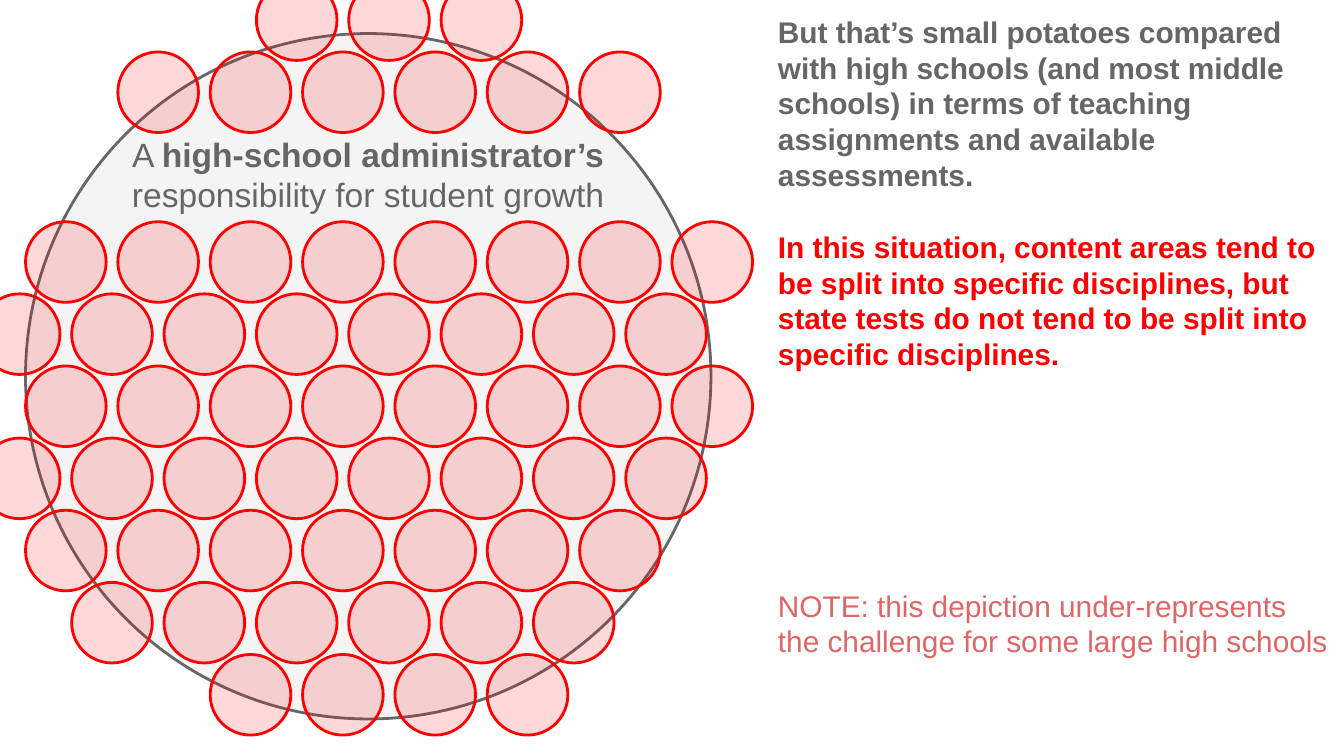
"""Build a slide on a high-school administrator's responsibility for student growth."""
import dataclasses

import pptx
import pptx.dml.color
import pptx.enum.shapes
import pptx.enum.text
import pptx.oxml.ns
import pptx.util
from lxml import etree

Inches = pptx.util.Inches
Pt = pptx.util.Pt


@dataclasses.dataclass(frozen=True)
class Theme:
    font: str = "Arial"
    gray: str = "666666"
    red: str = "FF0000"
    rose: str = "E06666"
    heading: int = 18
    body: int = 16
    outline: float = 1.5
    gray_alpha: int = 7
    red_alpha: int = 15


THEME = Theme()
SLIDE_WIDTH = Inches(10)
SLIDE_HEIGHT = SLIDE_WIDTH * 9 // 16
DIAMETER = 0.6
LEFT = 0.19
COL_STEP = 4.81 / 7
ROW_STEP = 3.22 / 6
LINE_HEIGHT = 19.25

BANDS = [
    (-0.15, [(2.5, 3), (1, 6)]),
    (1.65, [(0, 8), (-0.5, 8), (0, 8), (-0.5, 8), (0, 7), (0.5, 6), (2, 4)]),
]

HEADING = [
    [("A ", False), ("high-school administrator’s", True)],
    [("responsibility for student growth", False)],
]

MESSAGES = [
    ("But that’s small potatoes compared with high schools (and most middle schools) "
     "in terms of teaching assignments and available assessments.", THEME.gray, True, 0),
    ("In this situation, content areas tend to be split into specific disciplines, "
     "but state tests do not tend to be split into specific disciplines.", THEME.red, True, 1),
    ("NOTE: this depiction under-represents the challenge for some large high schools",
     THEME.rose, False, 6),
]


def rgb(color):
    return pptx.dml.color.RGBColor.from_string(color)


def set_all(obj, values):
    for name, value in values.items():
        setattr(obj, name, value)


def set_frame(tf, inset):
    margins = {f"margin_{side}": Inches(inset) for side in ("left", "top", "right", "bottom")}
    set_all(tf, {
        "word_wrap": True,
        "auto_size": pptx.enum.text.MSO_AUTO_SIZE.NONE,
        "vertical_anchor": pptx.enum.text.MSO_ANCHOR.TOP,
        **margins,
    })


def add_paragraph(tf, index, runs, size, color, **fmt):
    p = tf.add_paragraph() if index else tf.paragraphs[0]
    set_all(p, fmt)
    for text, bold in runs:
        r = p.add_run()
        r.text = text
        set_all(r.font, {"name": THEME.font, "size": Pt(size), "bold": bold})
        r.font.color.rgb = rgb(color)


def add_circle(s, x, y, diameter, color, alpha):
    sp = s.shapes.add_shape(
        pptx.enum.shapes.MSO_SHAPE.OVAL,
        Inches(x), Inches(y), Inches(diameter), Inches(diameter))
    sp.shadow.inherit = False
    sp.fill.solid()
    sp.fill.fore_color.rgb = rgb(color)
    qn = pptx.oxml.ns.qn
    clr = sp.element.spPr.find(qn("a:solidFill")).find(qn("a:srgbClr"))
    etree.SubElement(clr, qn("a:alpha"), val=str(alpha * 1000))
    sp.line.color.rgb = rgb(color)
    sp.line.width = Pt(THEME.outline)
    return sp


def add_responsibility(s):
    sp = add_circle(s, LEFT, 0.25, 5.1, THEME.gray, THEME.gray_alpha)
    tf = sp.text_frame
    set_frame(tf, 0)
    for i, runs in enumerate(HEADING):
        add_paragraph(tf, i, runs, THEME.heading, THEME.gray,
                      alignment=pptx.enum.text.PP_ALIGN.CENTER)


def add_assignments(s):
    for top, rows in BANDS:
        for row, (start, count) in enumerate(rows):
            for col in range(count):
                add_circle(s, LEFT + (start + col) * COL_STEP, top + row * ROW_STEP,
                           DIAMETER, THEME.red, THEME.red_alpha)


def add_messages(s):
    tf = s.shapes.add_textbox(Inches(5.69), 0, Inches(4.31), SLIDE_HEIGHT).text_frame
    set_frame(tf, 0.1)
    for i, (text, color, bold, gap) in enumerate(MESSAGES):
        add_paragraph(tf, i, [(text, bold)], THEME.body, color,
                      space_before=Pt(gap * LINE_HEIGHT))


def main():
    prs = pptx.Presentation()
    set_all(prs, {"slide_width": SLIDE_WIDTH, "slide_height": SLIDE_HEIGHT})
    s = prs.slides.add_slide(prs.slide_layouts[6])
    add_responsibility(s)
    add_assignments(s)
    add_messages(s)
    prs.save("out.pptx")


if __name__ == "__main__":
    main()
